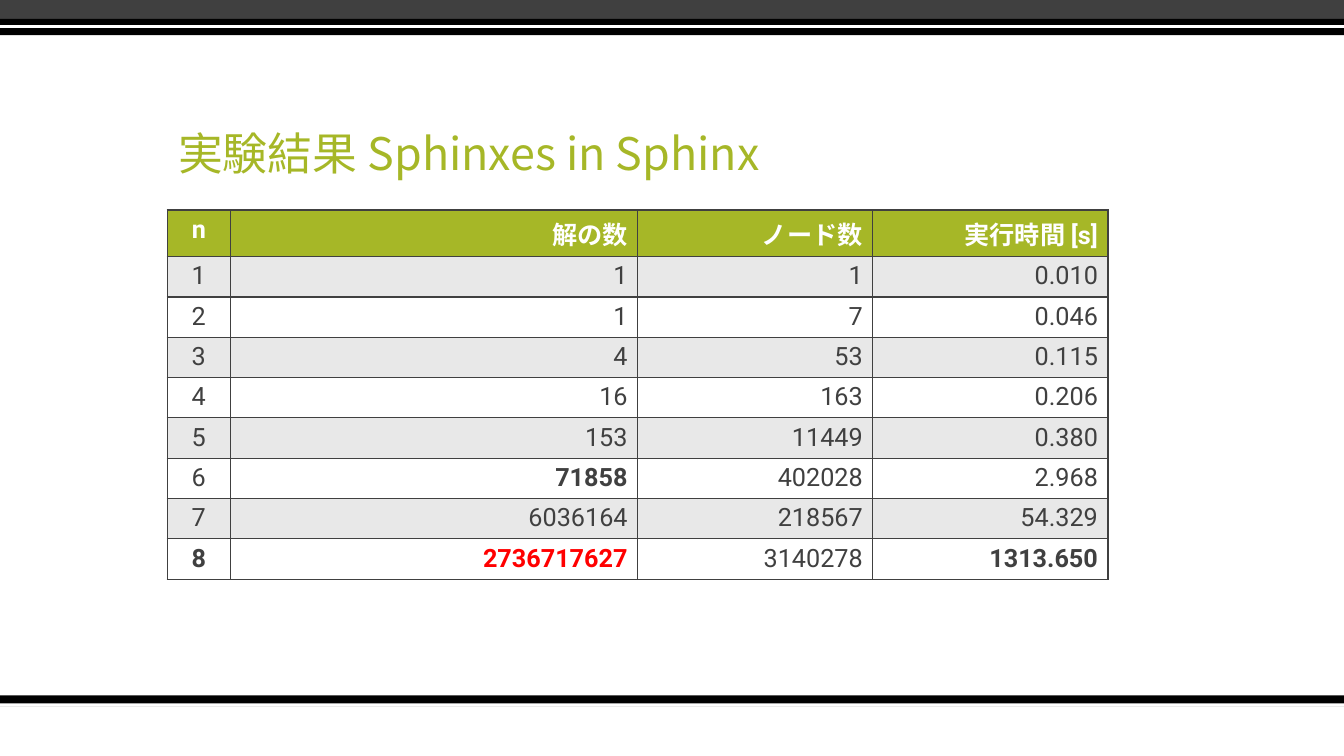
"""Build the slide with the table of Sphinxes in Sphinx results."""
import pptx
import pptx.util
import pptx.dml.color
import pptx.enum.shapes
import pptx.enum.text
import pptx.oxml
import pptx.oxml.ns

Pt = pptx.util.Pt
ALIGN = pptx.enum.text.PP_ALIGN

COLORS = {
    "green": "A6B727", "dark": "404040", "black": "000000",
    "white": "FFFFFF", "band": "E8E8E8", "red": "FF0000",
}
LATIN, ASIAN = "Roboto", "Noto Sans CJK JP"
TITLE = "実験結果 Sphinxes in Sphinx"
ROWS = [
    ("n", "解の数", "ノード数", "実行時間 [s]"),
    ("1", "1", "1", "0.010"),
    ("2", "1", "7", "0.046"),
    ("3", "4", "53", "0.115"),
    ("4", "16", "163", "0.206"),
    ("5", "153", "11449", "0.380"),
    ("6", "71858", "402028", "2.968"),
    ("7", "6036164", "218567", "54.329"),
    ("8", "2736717627", "3140278", "1313.650"),
]
BOLD = {"71858", "8", "2736717627", "1313.650"}
RED = {"2736717627"}
WIDTHS = (45, 291, 168, 168)
ROW_HEIGHT = 28.8
WIDE, HIGH = 960, 540
BARS = [
    (496.8, 7.6, "black"), (502.5, 2, "white"),
    (0, 13.5, "dark"), (13.5, 11.7, "black"), (18, 2, "white"),
]


def color(name):
    return pptx.dml.color.RGBColor.from_string(COLORS[name])


def style(para, face, size, tint, bold=False):
    font = para.font
    font.name, font.size, font.bold = face, Pt(size), bold
    font.color.rgb = color(tint)
    for run in para.runs:
        props = run.font
        props.name = face
        east = pptx.oxml.parse_xml(
            f'<a:ea {pptx.oxml.ns.nsdecls("a")} typeface="{ASIAN}"/>')
        run._r.get_or_add_rPr().find(pptx.oxml.ns.qn("a:latin")).addnext(east)


def add_bar(slide, top, height, tint):
    bar = slide.shapes.add_shape(
        pptx.enum.shapes.MSO_SHAPE.RECTANGLE, 0, Pt(top), Pt(WIDE), Pt(height))
    bar.shadow.inherit = False
    bar.fill.solid()
    bar.fill.fore_color.rgb = color(tint)
    bar.line.fill.background()


def add_border(cell):
    props = cell._tc.get_or_add_tcPr()
    for side in "LRTB":
        props.append(pptx.oxml.parse_xml(
            f'<a:ln{side} {pptx.oxml.ns.nsdecls("a")} w="{Pt(1)}"><a:solidFill>'
            f'<a:srgbClr val="{COLORS["dark"]}"/></a:solidFill></a:ln{side}>'))


def fill_cell(cell, text, row, col):
    add_border(cell)
    head = row == 0
    cell.fill.solid()
    cell.fill.fore_color.rgb = color(
        "green" if head else "band" if row % 2 else "white")
    cell.text = text
    para = cell.text_frame.paragraphs[0]
    para.alignment = ALIGN.RIGHT if col else ALIGN.CENTER
    tint = "white" if head else "red" if text in RED else "dark"
    style(para, LATIN, 18, tint, head or text in BOLD)


def add_title(slide):
    title = slide.shapes.title
    title.left, title.top, title.width, title.height = map(Pt, (120, 48, 720, 84))
    frame = title.text_frame
    frame.text = TITLE
    frame.auto_size = pptx.enum.text.MSO_AUTO_SIZE.NONE
    frame.vertical_anchor = pptx.enum.text.MSO_ANCHOR.BOTTOM
    para = frame.paragraphs[0]
    para.alignment, para.line_spacing = ALIGN.LEFT, 0.9
    style(para, ASIAN, 32, "green")


def add_results(slide):
    table = slide.shapes.add_table(
        len(ROWS), len(WIDTHS), Pt(119.5), Pt(150),
        Pt(sum(WIDTHS)), Pt(ROW_HEIGHT * len(ROWS))).table
    for column, width in zip(table.columns, WIDTHS):
        column.width = Pt(width)
    for row, texts in enumerate(ROWS):
        table.rows[row].height = Pt(ROW_HEIGHT)
        for col, text in enumerate(texts):
            fill_cell(table.cell(row, col), text, row, col)


def main():
    deck = pptx.Presentation()
    deck.slide_width, deck.slide_height = Pt(WIDE), Pt(HIGH)
    slide = deck.slides.add_slide(deck.slide_layouts[5])
    for bar in BARS:
        add_bar(slide, *bar)
    add_title(slide)
    add_results(slide)
    deck.save("out.pptx")


if __name__ == "__main__":
    main()
